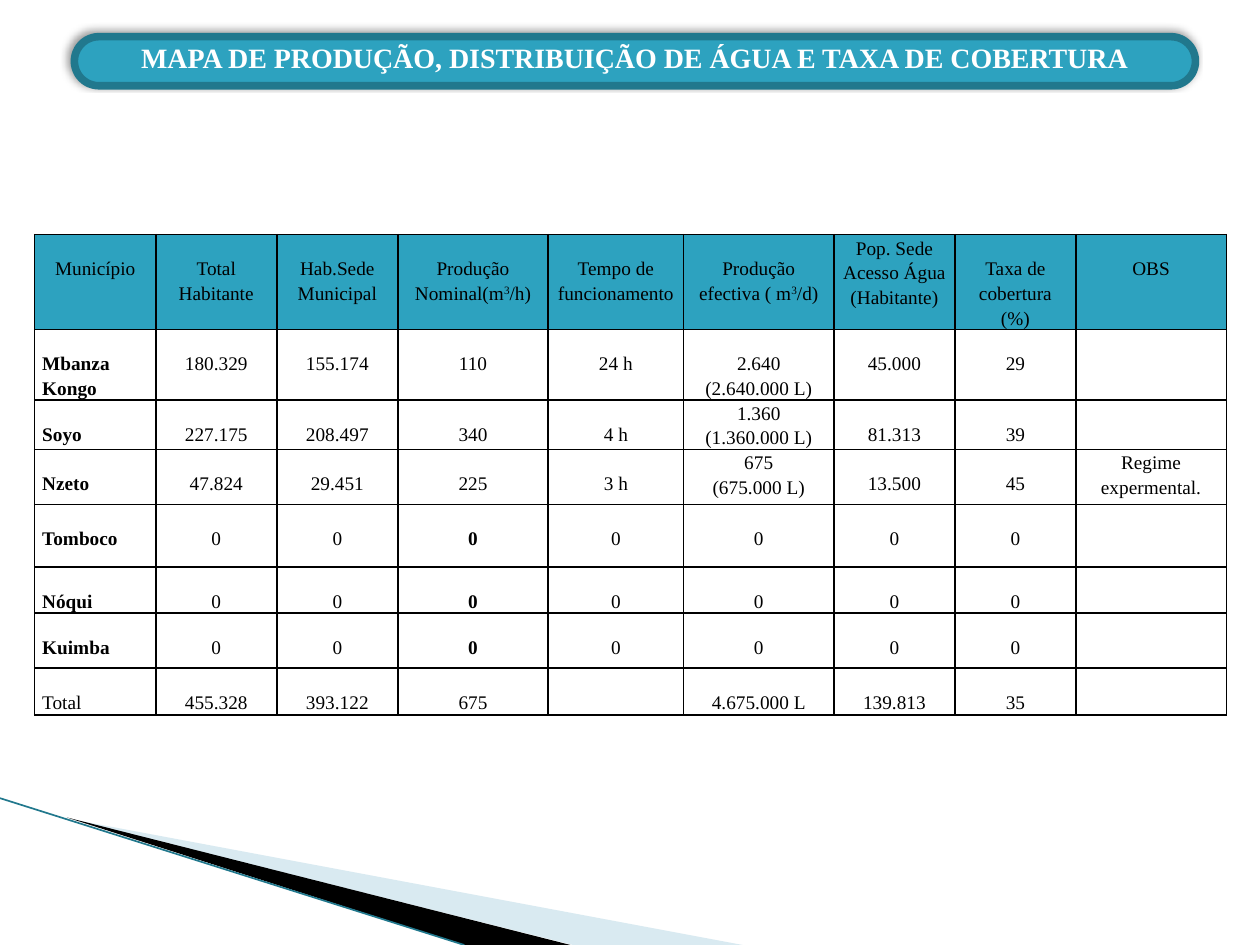
"""Build a slide with a table of water production, distribution and coverage."""
from lxml import etree
from pptx import Presentation
from pptx import util as u
from pptx.dml.color import RGBColor
from pptx.enum import shapes, text
from pptx.oxml import parse_xml
from pptx.oxml.ns import nsdecls, qn

TEAL = RGBColor(0x2D, 0xA2, 0xBF)
DEEP = RGBColor(0x21, 0x78, 0x8D)
PALE = RGBColor(0xA0, 0xCB, 0xDC)
BLACK = RGBColor(0, 0, 0)
WHITE = RGBColor(255, 255, 255)

TITLE = "MAPA DE PRODUÇÃO, DISTRIBUIÇÃO DE ÁGUA E TAXA DE COBERTURA"
WIDTHS = [2.44, 2.44, 2.44, 3.03, 2.73, 3.03, 2.44, 2.44, 3.03]
HEIGHTS = [1.65, 1.42, 1, 1.11, 1.26, 0.93, 1.11, 0.94]
ZEROS = ["0"] * 7 + [""]
ROWS = [
    ["Município", "Total Habitante", "Hab.Sede Municipal",
     "Produção Nominal(m^3^/h)", "Tempo de funcionamento",
     "Produção efectiva ( m^3^/d)", "Pop. Sede Acesso Água (Habitante)",
     "Taxa de cobertura (%)", "OBS"],
    ["Mbanza Kongo", "180.329", "155.174", "110", "24 h",
     "2.640\n(2.640.000 L)", "45.000", "29", ""],
    ["Soyo", "227.175", "208.497", "340", "4 h",
     "1.360\n(1.360.000 L)", "81.313", "39", ""],
    ["Nzeto", "47.824", "29.451", "225", "3 h",
     "675\n(675.000 L)", "13.500", "45", "Regime expermental."],
    ["Tomboco"] + ZEROS,
    ["Nóqui"] + ZEROS,
    ["Kuimba"] + ZEROS,
    ["Total", "455.328", "393.122", "675", "", "4.675.000 L", "139.813",
     "35", ""],
]
RAISED = {(0, 6), (2, 5), (3, 5), (3, 8)}
BASE = {"name": "Times New Roman", "size": u.Pt(11), "bold": False}


def style(font, color, **extra):
    """Apply the base format, with changes, to a font."""
    for key, value in {**BASE, **extra}.items():
        setattr(font, key, value)
    font.color.rgb = color


def add_wedge(slide, points, color, alpha=100):
    """Draw a filled outline through points given in centimetres."""
    first, *rest = [(u.Cm(x), u.Cm(y)) for x, y in points]
    pen = slide.shapes.build_freeform(*first)
    pen.add_line_segments(rest, close=True)
    wedge = pen.convert_to_shape()
    wedge.shadow.inherit = False
    wedge.fill.solid()
    wedge.fill.fore_color.rgb = color
    wedge.line.fill.background()
    if alpha < 100:
        tint = wedge.element.spPr.find(".//" + qn("a:srgbClr"))
        etree.SubElement(tint, qn("a:alpha")).set("val", str(alpha * 1000))


def add_edge(slide):
    """Draw the thin slanted line at the foot of the slide."""
    ends = [u.Cm(n) for n in (0, 16.09, 9.36, 19.05)]
    edge = slide.shapes.add_connector(shapes.MSO_CONNECTOR.STRAIGHT, *ends)
    edge.line.color.rgb = DEEP
    edge.line.width = u.Pt(0.95)
    etree.SubElement(edge.element.spPr, qn("a:effectLst"))


def add_title(slide):
    """Draw the rounded title bar with its shadow."""
    box = [u.Cm(n) for n in (1.5, 0.74, 22.6, 0.99)]
    bar = slide.shapes.add_shape(shapes.MSO_SHAPE.ROUNDED_RECTANGLE, *box)
    bar.adjustments[0] = 0.5
    bar.fill.solid()
    bar.fill.fore_color.rgb = TEAL
    bar.line.color.rgb = DEEP
    bar.line.width = u.Pt(4.33)
    bar.element.spPr.append(parse_xml(
        f'<a:effectLst {nsdecls("a")}><a:outerShdw blurRad="50800" '
        'dist="38100" dir="13500000"><a:srgbClr val="000000">'
        '<a:alpha val="40000"/></a:srgbClr></a:outerShdw></a:effectLst>'))
    frame = bar.text_frame
    frame.word_wrap = True
    frame.vertical_anchor = text.MSO_ANCHOR.MIDDLE
    frame.margin_top, frame.margin_bottom = 0, u.Cm(0.14)
    para = frame.paragraphs[0]
    para.alignment = text.PP_ALIGN.CENTER
    run = para.add_run()
    run.text = TITLE
    style(run.font, WHITE, size=u.Pt(16), bold=True)


def add_border(cell):
    """Give a cell thin black lines on its four sides."""
    props = cell._tc.get_or_add_tcPr()
    for side in "LRTB":
        props.append(parse_xml(
            f'<a:ln{side} {nsdecls("a")} w="12700"><a:solidFill>'
            f'<a:srgbClr val="{BLACK}"/></a:solidFill></a:ln{side}>'))


def fill_cell(cell, row, col, words):
    """Format one table cell and write its words."""
    add_border(cell)
    if row == 0:
        cell.fill.solid()
        cell.fill.fore_color.rgb = TEAL
    else:
        cell.fill.background()
    cell.margin_left = cell.margin_right = u.Cm(0.15)
    cell.margin_top = u.Cm(0.42 if words and (row, col) not in RAISED else 0)
    cell.margin_bottom = 0
    named = col == 0 and row > 0
    bold = named and row < 7 or col == 3 and row in (4, 5, 6)
    cell.text = words.replace("^", "")
    for para, line in zip(cell.text_frame.paragraphs, words.split("\n")):
        para.clear()
        para.line_spacing = 1.15
        para.alignment = (text.PP_ALIGN.LEFT if named
                          else text.PP_ALIGN.CENTER)
        for place, part in enumerate(line.split("^")):
            if part:
                run = para.add_run()
                run.text = part
                style(run.font, BLACK, bold=bold)
                if place % 2:
                    run._r.get_or_add_rPr().set("baseline", "30000")


def add_grid(slide):
    """Build the table of municipalities."""
    box = [u.Cm(n) for n in (0.7, 4.73, sum(WIDTHS), sum(HEIGHTS))]
    grid = slide.shapes.add_table(len(ROWS), len(WIDTHS), *box).table
    grid.first_row = grid.horz_banding = False
    for col, width in zip(grid.columns, WIDTHS):
        col.width = u.Cm(width)
    for row, height in zip(grid.rows, HEIGHTS):
        row.height = u.Cm(height)
    for r, line in enumerate(ROWS):
        for c, words in enumerate(line):
            fill_cell(grid.cell(r, c), r, c, words)


def main():
    """Build and save the slide."""
    deck = Presentation()
    deck.slide_width, deck.slide_height = u.Cm(25.4), u.Cm(19.05)
    slide = deck.slides.add_slide(deck.slide_layouts[6])
    add_wedge(slide, [(1.4, 16.51), (14.97, 19.05), (11.55, 19.05)], PALE, 40)
    add_wedge(slide, [(1.35, 16.48), (11.5, 19.05), (9.36, 19.05)], BLACK)
    add_edge(slide)
    add_grid(slide)
    add_title(slide)
    deck.save("out.pptx")


if __name__ == "__main__":
    main()
